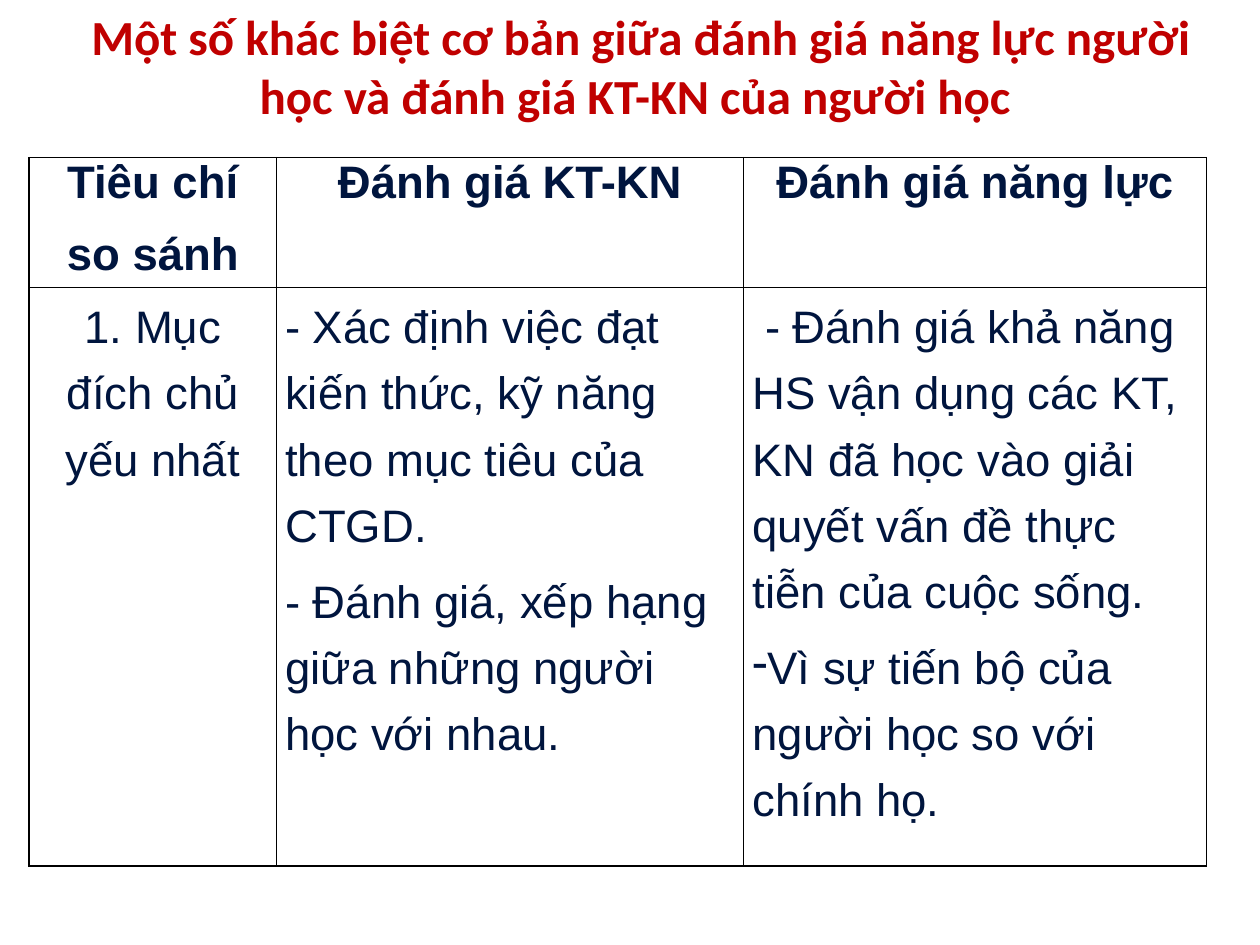
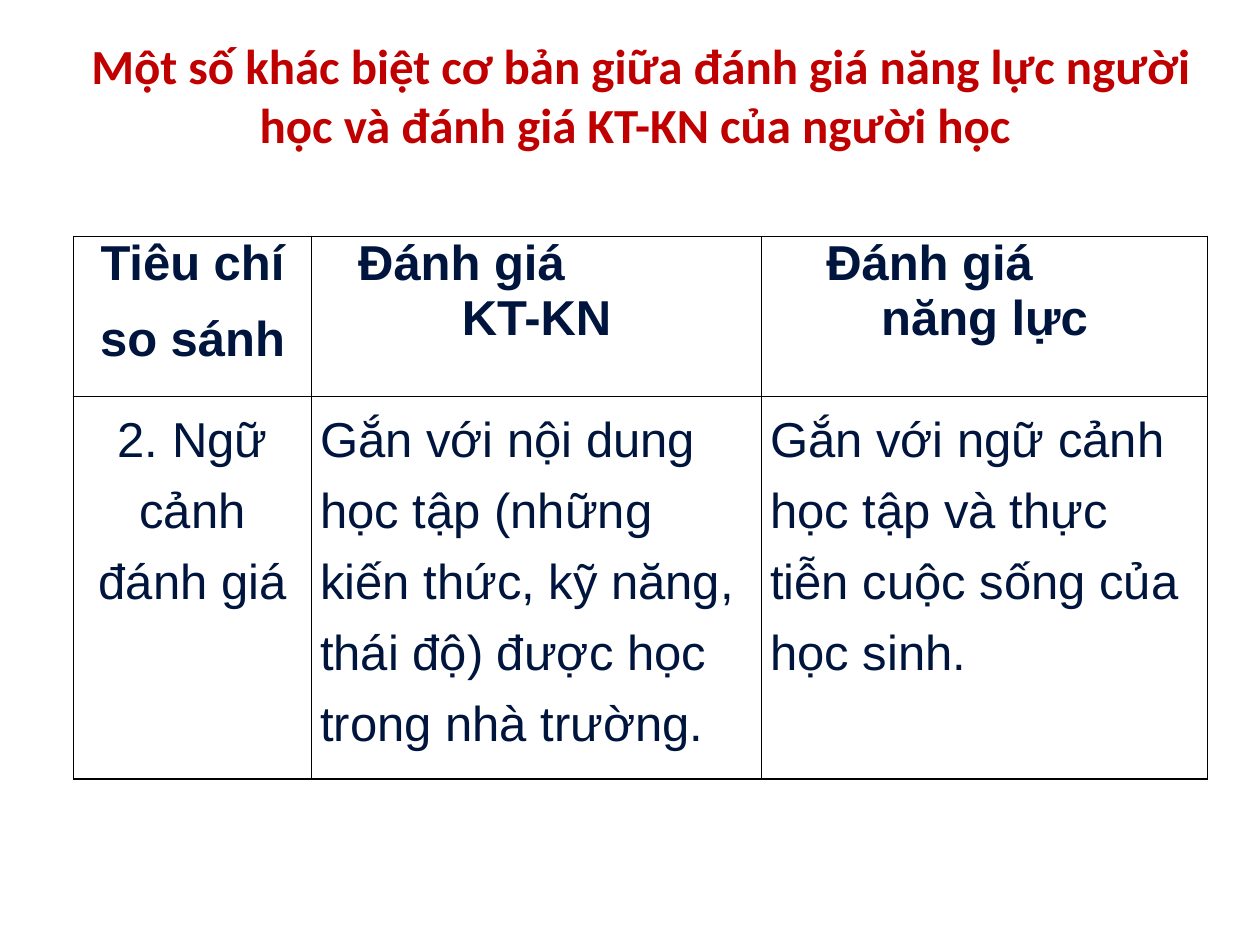
from dataclasses import dataclass

from lxml import etree
from pptx import Presentation
from pptx.dml.color import RGBColor
from pptx.enum.text import MSO_ANCHOR, MSO_AUTO_SIZE, PP_ALIGN
from pptx.oxml.ns import qn
from pptx.util import Pt

LEFT, CENTER = PP_ALIGN.LEFT, PP_ALIGN.CENTER
TOP = MSO_ANCHOR.TOP
NO_AUTOFIT = MSO_AUTO_SIZE.NONE
TITLE_ONLY = 5
TITLE = "Một số khác biệt cơ bản giữa đánh giá năng lực người học và đánh giá KT-KN của người học "


@dataclass(frozen=True)
class Theme:
    title_font: str = "Calibri"
    table_font: str = "Arial"
    title_color: RGBColor = RGBColor(0xC0, 0x00, 0x00)
    table_color: RGBColor = RGBColor(0x00, 0x15, 0x3E)
    border_color: str = "000000"
    border_width: float = 1
    title_size: float = 28
    cell_inset: float = 5
    spacing: float = 6
    body_line: float = 1.3


@dataclass(frozen=True)
class Line:
    text: str
    align: PP_ALIGN = LEFT
    before: float = 6
    after: float = 0
    indent: float = 0
    bullet: str = ""


@dataclass(frozen=True)
class Comparison:
    title_top: float
    left: float
    top: float
    columns: tuple[float, ...]
    rows: tuple[float, ...]
    text_size: float
    header: tuple[tuple[Line, ...], ...]
    body: tuple[tuple[Line, ...], ...]


THEME = Theme()


def heading(text: str) -> Line:
    return Line(text, CENTER, THEME.spacing, THEME.spacing)


def stepped_heading(first: str, second: str, indent: float) -> tuple[Line, ...]:
    return (Line(first, indent=indent), Line(second, CENTER, 0, THEME.spacing))


CRITERIA = (heading("Tiêu chí"), heading("so sánh"))

COMPARISONS = (
    Comparison(
        title_top=0, left=16.7, top=90, columns=(141.3, 267, 264.5), rows=(74.3, 330.5), text_size=26,
        header=(CRITERIA, (heading("Đánh giá KT-KN"),), (heading("Đánh giá năng lực"),)),
        body=(
            (Line("1. Mục đích chủ yếu nhất", CENTER),),
            (
                Line("- Xác định việc đạt kiến thức, kỹ năng theo mục tiêu của CTGD."),
                Line("- Đánh giá, xếp hạng giữa những người học với nhau."),
            ),
            (
                Line(" - Đánh giá khả năng HS vận dụng các KT, KN đã học vào giải quyết vấn đề thực tiễn của cuộc sống."),
                Line("Vì sự tiến bộ của người học so với chính họ.", bullet="-"),
            ),
        ),
    ),
    Comparison(
        title_top=16.7, left=42, top=135, columns=(136, 257.2, 254.8), rows=(91.6, 218.5), text_size=28,
        header=(
            CRITERIA,
            stepped_heading("Đánh giá", "KT-KN", 21.7),
            stepped_heading("Đánh giá", "năng lực", 32),
        ),
        body=(
            (Line("2. Ngữ cảnh đánh giá", CENTER),),
            (Line("Gắn với nội dung học tập (những kiến thức, kỹ năng, thái độ) được học trong nhà trường."),),
            (Line("Gắn với ngữ cảnh học tập và thực tiễn cuộc sống của học sinh."),),
        ),
    ),
)


def style_font(font, name: str, size: float, color: RGBColor, bold: bool) -> None:
    font.name = name
    font.size = Pt(size)
    font.bold = bold
    font.color.rgb = color


def write_title(page, top: float) -> None:
    box = page.shapes.title
    box.left, box.top, box.width, box.height = Pt(30), Pt(top), Pt(672), Pt(75)
    frame = box.text_frame
    frame.text = TITLE
    frame.word_wrap = True
    frame.auto_size = NO_AUTOFIT
    frame.vertical_anchor = TOP
    para = frame.paragraphs[0]
    para.alignment = CENTER
    style_font(para.runs[0].font, THEME.title_font, THEME.title_size, THEME.title_color, True)


def draw_borders(cell) -> None:
    properties = cell._tc.get_or_add_tcPr()
    for side in ("lnL", "lnR", "lnT", "lnB"):
        border = etree.SubElement(properties, qn(f"a:{side}"), w=str(Pt(THEME.border_width)))
        fill = etree.SubElement(border, qn("a:solidFill"))
        etree.SubElement(fill, qn("a:srgbClr"), val=THEME.border_color)


def write_line(para, line: Line, size: float, is_header: bool) -> None:
    para.text = line.text
    para.alignment = line.align
    para.space_before = Pt(line.before)
    para.space_after = Pt(line.after)
    if not is_header:
        para.line_spacing = THEME.body_line
    properties = para._p.get_or_add_pPr()
    properties.set("marL", str(Pt(line.indent)))
    properties.set("indent", "0")
    if line.bullet:
        etree.SubElement(properties, qn("a:buChar"), char=line.bullet)
    for span in para.runs:
        style_font(span.font, THEME.table_font, size, THEME.table_color, is_header)


def fill_cell(cell, lines: tuple[Line, ...], size: float, is_header: bool) -> None:
    cell.margin_left = cell.margin_right = Pt(THEME.cell_inset)
    cell.margin_top = cell.margin_bottom = Pt(0)
    draw_borders(cell)
    cell.fill.background()
    frame = cell.text_frame
    for index, line in enumerate(lines):
        para = frame.add_paragraph() if index else frame.paragraphs[0]
        write_line(para, line, size, is_header)


def draw_table(page, comparison: Comparison) -> None:
    table = page.shapes.add_table(
        len(comparison.rows), len(comparison.columns),
        Pt(comparison.left), Pt(comparison.top),
        Pt(sum(comparison.columns)), Pt(sum(comparison.rows)),
    ).table
    table.first_row = table.horz_banding = False
    for column, width in zip(table.columns, comparison.columns):
        column.width = Pt(width)
    for row, height in zip(table.rows, comparison.rows):
        row.height = Pt(height)
    for row_index, contents in enumerate((comparison.header, comparison.body)):
        for column_index, lines in enumerate(contents):
            cell = table.cell(row_index, column_index)
            fill_cell(cell, lines, comparison.text_size, row_index == 0)


def main() -> None:
    deck = Presentation()
    deck.slide_width, deck.slide_height = Pt(720), Pt(540)
    for comparison in COMPARISONS:
        page = deck.slides.add_slide(deck.slide_layouts[TITLE_ONLY])
        write_title(page, comparison.title_top)
        draw_table(page, comparison)
    deck.save("out.pptx")


if __name__ == "__main__":
    main()
